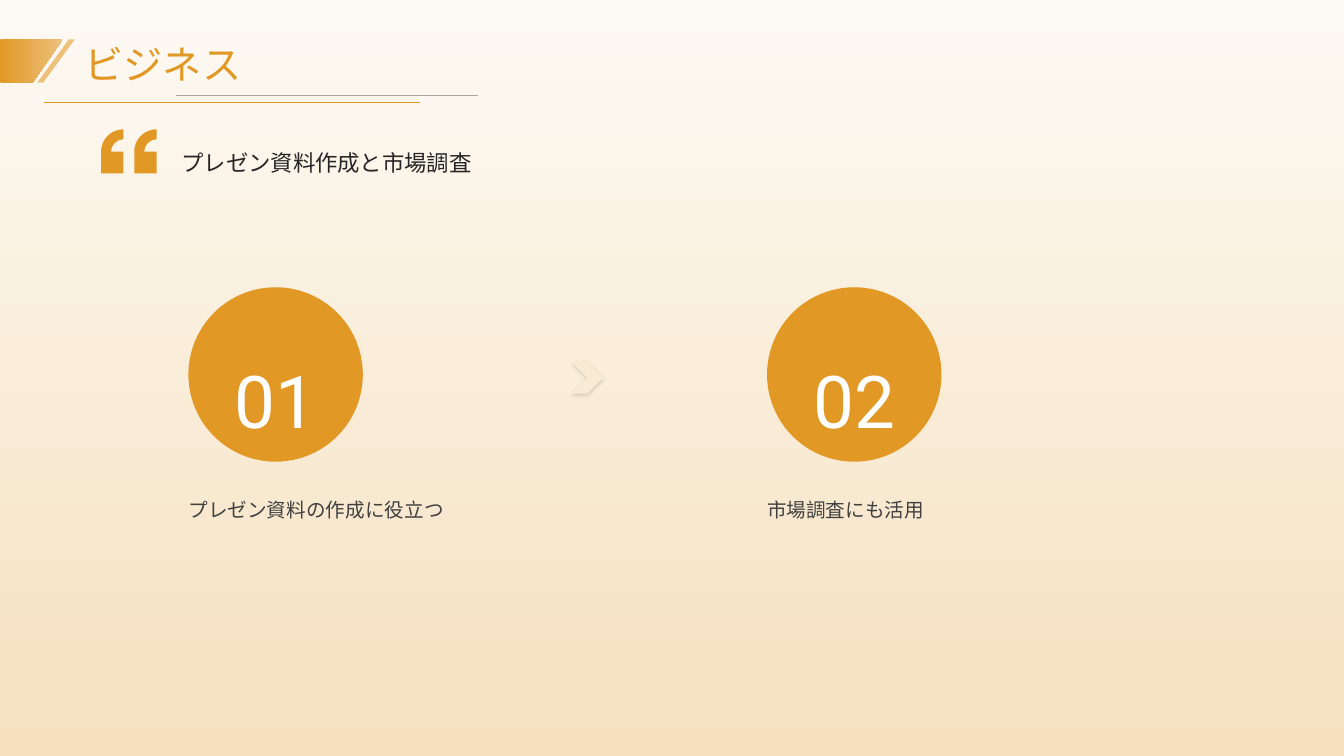
from math import cos, pi, sin

from lxml.etree import SubElement as Sub
from pptx import Presentation
from pptx.dml.color import RGBColor
from pptx.enum.shapes import MSO_CONNECTOR as Link, MSO_SHAPE as Kind
from pptx.enum.text import MSO_ANCHOR as Anchor, MSO_AUTO_SIZE as Fit, PP_ALIGN as Align
from pptx.oxml.ns import qn
from pptx.util import Pt

GOLD, PALE = "E19825", "EDC17C"
STEPS = [
    (134.6, 293.8, "01", "プレゼン資料の作成に役立つ"),
    (547.9, 310.3, "02", "市場調査にも活用"),
]


def color(code):
    return RGBColor.from_string(code)


def blend(fill, first, last, angle):
    fill.gradient()
    fill.gradient_angle = angle
    for stop, code, place in zip(fill.gradient_stops, (first, last), (0, 1)):
        stop.color.rgb = color(code)
        stop.position = place


def paint(shape, code):
    shape.fill.solid()
    shape.fill.fore_color.rgb = color(code)
    shape.line.fill.background()
    shape.shadow.inherit = False
    return shape


def add_shape(slide, kind, box, code):
    return paint(slide.shapes.add_shape(kind, *map(Pt, box)), code)


def add_outline(slide, loops, code):
    """Draw closed loops of (x, y) points as one shape."""
    loops = [[(Pt(x), Pt(y)) for x, y in loop] for loop in loops]
    pen = slide.shapes.build_freeform(*loops[0][0])
    for i, loop in enumerate(loops):
        if i:
            pen.move_to(*loop[0])
        pen.add_line_segments(loop[1:], close=True)
    return paint(pen.convert_to_shape(), code)


def set_text(shape, text, size, code, font="Cambria", space=1.5,
             align=Align.LEFT, anchor=Anchor.TOP, pad=0):
    frame = shape.text_frame
    frame.text = text
    frame.word_wrap = True
    frame.auto_size = Fit.NONE
    frame.vertical_anchor = anchor
    frame.margin_left = frame.margin_right = 0
    frame.margin_top = frame.margin_bottom = Pt(pad)
    para = frame.paragraphs[0]
    para.alignment = align
    para.line_spacing = space
    para.space_before = Pt(0)
    para.font.size = Pt(size)
    para.font.name = font
    para.font.color.rgb = color(code)


def add_text(slide, box, text, size, code, **look):
    set_text(slide.shapes.add_textbox(*map(Pt, box)), text, size, code, **look)


def add_line(slide, left, right, y, code):
    line = slide.shapes.add_connector(Link.STRAIGHT, Pt(left), Pt(y), Pt(right), Pt(y))
    line.line.color.rgb = color(code)
    line.line.width = Pt(0.5)
    Sub(line._element.spPr, qn("a:effectLst"))


def add_shadow(shape):
    effects = shape._element.spPr.find(qn("a:effectLst"))
    cast = Sub(effects, qn("a:outerShdw"), blurRad=str(Pt(3)), dist=str(Pt(1)),
               dir="5400000", algn="t", rotWithShape="0")
    tint = Sub(cast, qn("a:srgbClr"), val="000000")
    Sub(tint, qn("a:alpha"), val="15000")


def quote(left, top, wide=16, high=31.4, hole=8.8):
    """Return the points of one quote mark with a curved tail."""
    x, y = left + wide, top + wide
    turns = [i * pi / 32 for i in range(17)]
    inner = [(x - hole * sin(t), y - hole * cos(t)) for t in turns]
    outer = [(x - wide * cos(t), y - wide * sin(t)) for t in turns]
    return inner + [(x, y), (x, top + high), (left, top + high)] + outer


def add_header(slide):
    title = slide.shapes.title
    title.left, title.top, title.width, title.height = map(Pt, (60.5, 25.9, 846.7, 36.7))
    set_text(title, "ビジネス", 28, GOLD, space=1.1, anchor=Anchor.MIDDLE)
    stripe = add_shape(slide, Kind.PARALLELOGRAM, (26.6, 28.1, 26.9, 31), PALE)
    stripe.adjustments[0] = 0.84
    flag = [(0, 28.1), (44.8, 28.1), (23.3, 59.1), (0, 59.1)]
    blend(add_outline(slide, [flag], GOLD).fill, GOLD, PALE, 0)
    add_line(slide, 31.5, 300, 72.9, GOLD)
    add_line(slide, 126, 341.3, 68.3, "A6A6A6")


def add_step(slide, left, width, number, label):
    add_shape(slide, Kind.OVAL, (left, 205.2, 124.6, 124.6), GOLD)
    add_text(slide, (left - 22, 228.2, 168.5, 83.5), number, 52, "FFFFFF",
             font="Roboto", align=Align.CENTER, anchor=Anchor.MIDDLE, pad=3)
    add_text(slide, (left, 344.2, width, 141.8), label, 14, "404040", pad=3)


def main():
    deck = Presentation()
    deck.slide_width, deck.slide_height = Pt(960), Pt(540)
    slide = deck.slides.add_slide(deck.slide_layouts.get_by_name("Title Only"))
    blend(slide.background.fill, "FDFAF4", "F6E0BE", 270)
    add_header(slide)
    add_outline(slide, [quote(x, 92.4) for x in (72.2, 95.9)], GOLD)
    add_text(slide, (129.6, 97.2, 756.7, 107.3), "プレゼン資料作成と市場調査", 16, "262626")
    for step in STEPS:
        add_step(slide, *step)
    add_shadow(add_shape(slide, Kind.CHEVRON, (408.2, 258.5, 22.6, 22.6), "F9EAD3"))
    deck.save("out.pptx")


if __name__ == "__main__":
    main()
